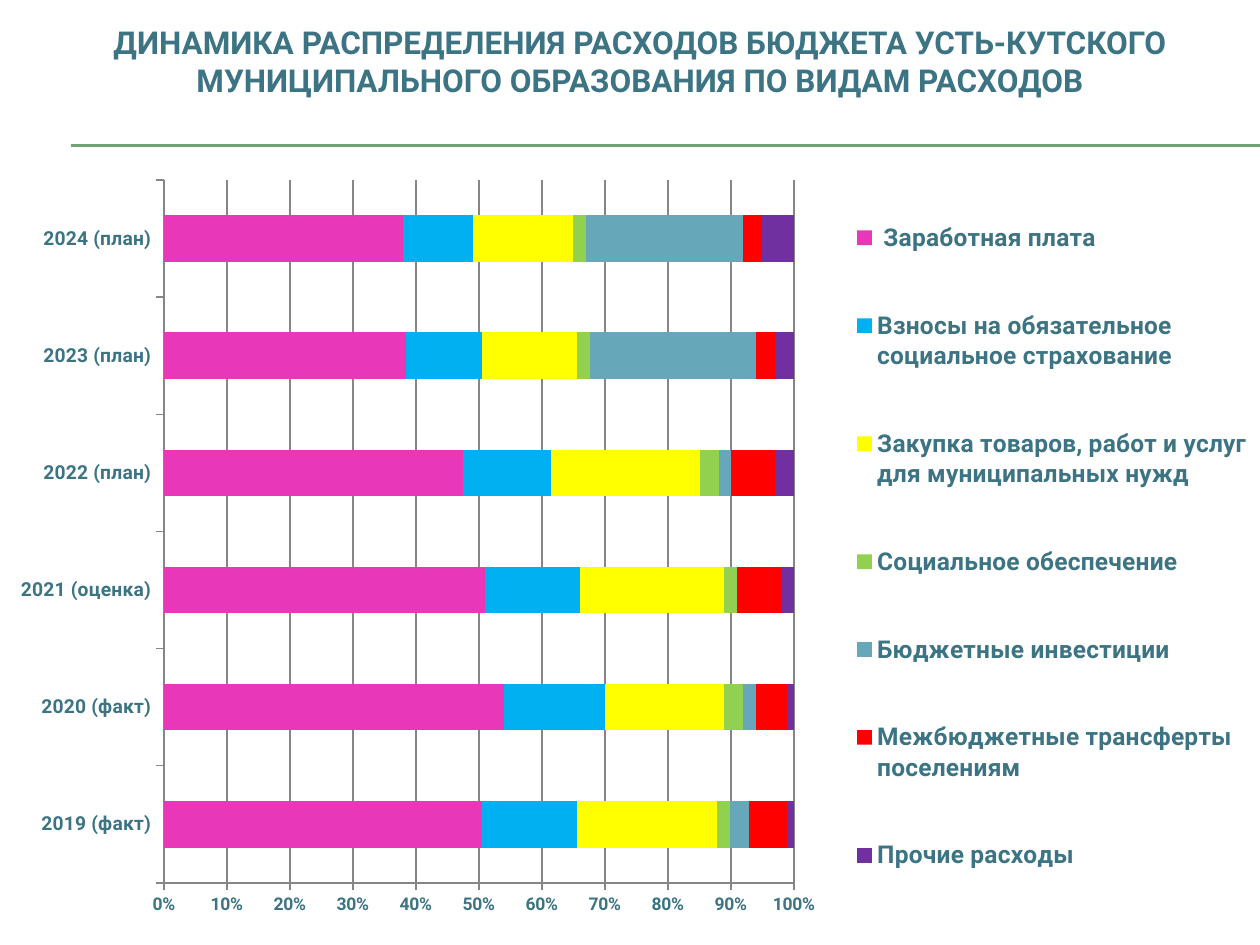
from lxml import etree
from pptx import Presentation, util as u
from pptx.chart.data import CategoryChartData
from pptx.dml.color import RGBColor
from pptx.enum import chart as charts, shapes, text
from pptx.oxml import parse_xml
from pptx.oxml.ns import nsdecls, qn

WIDTH, HEIGHT = 10, 7.5
FONT, TEAL, GREEN, GRAY = "Roboto", "3C7483", "72A376", "868686"
TITLE = ("ДИНАМИКА РАСПРЕДЕЛЕНИЯ РАСХОДОВ БЮДЖЕТА УСТЬ-КУТСКОГО "
         "МУНИЦИПАЛЬНОГО ОБРАЗОВАНИЯ ПО ВИДАМ РАСХОДОВ")
YEARS = ["2019 (факт)", "2020 (факт)", "2021 (оценка)",
         "2022 (план)", "2023 (план)", "2024 (план)"]
EXPENSES = [
    (" Заработная плата", "E937BA", (50, 54, 51, 48, 38, 38)),
    ("Взносы на обязательное социальное страхование", "00B0F0", (15, 16, 15, 14, 12, 11)),
    ("Закупка товаров, работ и услуг для муниципальных нужд", "FFFF00",
     (22, 19, 23, 24, 15, 16)),
    ("Социальное обеспечение", "92D050", (2, 3, 2, 3, 2, 2)),
    ("Бюджетные инвестиции", "66A7B9", (3, 2, 0, 2, 26, 25)),
    ("Межбюджетные трансферты поселениям", "FF0000", (6, 5, 7, 7, 3, 3)),
    ("Прочие расходы", "7030A0", (1, 1, 2, 3, 3, 5)),
]


def color(value):
    return RGBColor.from_string(value)


def set_font(font, size):
    for name, value in {"name": FONT, "size": u.Pt(size), "bold": True}.items():
        setattr(font, name, value)
    font.color.rgb = color(TEAL)


def set_line(line, value, width):
    line.color.rgb = color(value)
    line.width = u.Pt(width)


def set_layout(element, index, inner=False, **shares):
    """Place a chart part by shares (x, y, w, h) of the chart's size."""
    for old in element.findall(qn("c:layout")):
        element.remove(old)
    layout = parse_xml(f"<c:layout {nsdecls('c')}><c:manualLayout/></c:layout>")
    values = {"layoutTarget": "inner"} if inner else {}
    values.update({"xMode": "edge", "yMode": "edge"}, **shares)
    for name, value in values.items():
        etree.SubElement(layout[0], qn(f"c:{name}")).set("val", str(value))
    element.insert(index, layout)


def add_title(slide):
    title = slide.shapes.title
    place = {"left": 0.33, "top": 0.05, "width": 9.5, "height": 0.87}
    for name, value in place.items():
        setattr(title, name, u.Inches(value))
    frame = title.text_frame
    frame.word_wrap = True
    frame.vertical_anchor = text.MSO_ANCHOR.MIDDLE
    para = frame.paragraphs[0]
    para.alignment = text.PP_ALIGN.CENTER
    span = para.add_run()
    span.text = TITLE
    set_font(span.font, 18)


def add_rule(slide, top):
    rule = slide.shapes.add_connector(
        shapes.MSO_CONNECTOR.STRAIGHT,
        u.Inches(0.56), u.Inches(top), u.Inches(WIDTH), u.Inches(top))
    set_line(rule.line, GREEN, 0.75)
    etree.SubElement(rule._element.spPr, qn("a:effectLst"))


def format_axis(axis, size):
    axis.major_tick_mark = charts.XL_TICK_MARK.OUTSIDE
    axis.minor_tick_mark = charts.XL_TICK_MARK.NONE
    set_font(axis.tick_labels.font, size)
    set_line(axis.format.line, GRAY, 1)


def add_expense_chart(slide):
    data = CategoryChartData()
    data.categories = YEARS
    for name, _, values in EXPENSES:
        data.add_series(name, values)
    chart = slide.shapes.add_chart(
        charts.XL_CHART_TYPE.BAR_STACKED_100, 0, u.Inches(1.31),
        u.Inches(WIDTH), u.Inches(6.06), data).chart
    chart.has_title = False
    chart.font.name = FONT
    chart.font.size = u.Pt(18)

    plot = chart.plots[0]
    plot.gap_width, plot.overlap, plot.vary_by_categories = 150, 100, False
    for series, (_, fill, _) in zip(plot.series, EXPENSES):
        series.format.fill.solid()
        series.format.fill.fore_color.rgb = color(fill)

    format_axis(chart.category_axis, 11)
    axis = chart.value_axis
    format_axis(axis, 10)
    axis.minimum_scale, axis.maximum_scale, axis.major_unit = 0, 1, 0.1
    axis.tick_labels.number_format = "0%"
    axis.tick_labels.number_format_is_linked = False
    axis.has_major_gridlines = True
    set_line(axis.major_gridlines.format.line, GRAY, 1)

    chart.has_legend = True
    legend = chart.legend
    legend.position = charts.XL_LEGEND_POSITION.RIGHT
    legend.include_in_layout = False
    set_font(legend.font, 14)
    set_layout(legend._element, 1, x=0.67, y=0, w=0.33, h=1)
    plot_area = chart._chartSpace.chart.plotArea
    set_layout(plot_area, 0, inner=True, x=0.13, y=0.02, w=0.5, h=0.92)


def main():
    deck = Presentation()
    deck.slide_width, deck.slide_height = u.Inches(WIDTH), u.Inches(HEIGHT)
    slide = deck.slides.add_slide(deck.slide_layouts[5])
    for top in (1.15, 1.16):
        add_rule(slide, top)
    add_title(slide)
    add_expense_chart(slide)
    deck.save("out.pptx")


if __name__ == "__main__":
    main()
